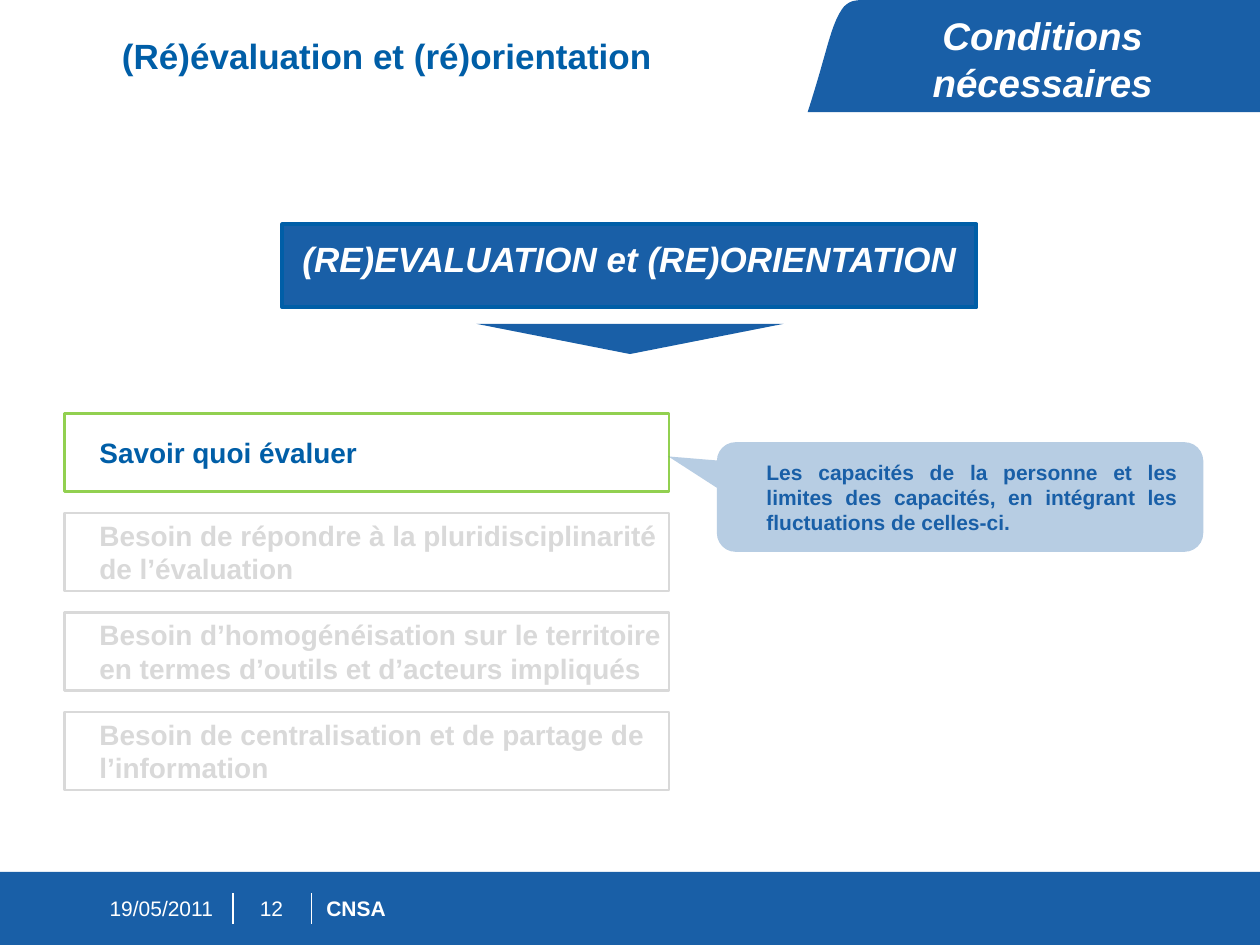
from lxml import etree
from pptx import Presentation
from pptx.dml.color import RGBColor
from pptx.enum.shapes import MSO_CONNECTOR as Connector, MSO_SHAPE as Shape
from pptx.enum.text import MSO_ANCHOR as Anchor, PP_ALIGN as Align
from pptx.oxml.ns import qn
from pptx.util import Inches, Pt

BLUE, NAVY, WHITE, GREY, GREEN = "195FA7", "005EA7", "FFFFFF", "D9D9D9", "92D050"


def colour(value):
    return RGBColor.from_string(value)


def curve(start, first, second, end, steps=16):
    points = []
    for step in range(1, steps + 1):
        t = step / steps
        weights = ((1 - t) ** 3, 3 * t * (1 - t) ** 2, 3 * t * t * (1 - t), t ** 3)
        points.append(tuple(
            sum(w * v for w, v in zip(weights, axis))
            for axis in zip(start, first, second, end)
        ))
    return points


class SlideBuilder:
    """Hold the style and the current slide, and add each kind of element."""

    font = "Arial"

    def __init__(self, deck):
        self.page = deck.slides.add_slide(deck.slide_layouts[6])

    def paint(self, box, fill, line=None, width=1.5, alpha=None):
        box.shadow.inherit = False
        box.fill.solid()
        box.fill.fore_color.rgb = colour(fill)
        if alpha:
            tint = box._element.spPr.find(qn("a:solidFill"))[0]
            etree.SubElement(tint, qn("a:alpha"), val=str(alpha * 1000))
        if line:
            box.line.color.rgb = colour(line)
            box.line.width = Pt(width)
        else:
            box.line.fill.background()
        return box

    def shape(self, kind, at, fill, **style):
        box = self.page.shapes.add_shape(kind, *map(Inches, at))
        return self.paint(box, fill, **style)

    def outline(self, points, fill):
        start, *rest = [(Inches(x), Inches(y)) for x, y in points]
        builder = self.page.shapes.build_freeform(*start)
        builder.add_line_segments(rest)
        return self.paint(builder.convert_to_shape(), fill)

    def set_text(self, box, text, size, ink, bold=True, italic=False, align=Align.LEFT,
                 anchor=Anchor.MIDDLE, margins=(0, 0, 0, 0), spacing=None):
        frame = box.text_frame
        frame.word_wrap = True
        frame.vertical_anchor = anchor
        (frame.margin_left, frame.margin_top,
         frame.margin_right, frame.margin_bottom) = map(Inches, margins)
        para = frame.paragraphs[0]
        para.text = text
        para.alignment = align
        para.line_spacing = spacing
        font = para.font
        font.name, font.size = self.font, Pt(size)
        font.bold, font.italic = bold, italic
        font.color.rgb = colour(ink)

    def label(self, at, text, size, ink, **style):
        box = self.page.shapes.add_textbox(*map(Inches, at))
        self.set_text(box, text, size, ink, **style)

    def divider(self, x, top, bottom):
        line = self.page.shapes.add_connector(
            Connector.STRAIGHT, *map(Inches, (x, top, x, bottom)))
        line.line.color.rgb = colour(WHITE)
        line.line.width = Pt(0.75)
        etree.SubElement(line._element.spPr, qn("a:effectLst"))


def main():
    deck = Presentation()
    deck.slide_width, deck.slide_height = Inches(10), Inches(7.5)
    slide = SlideBuilder(deck)

    tab = [(10, 0), (6.86, 0)]
    tab += curve((6.86, 0), (6.74, 0), (6.73, 0.03), (6.7, 0.05))
    tab += curve((6.7, 0.05), (6.59, 0.19), (6.57, 0.4), (6.41, 0.89))
    slide.outline(tab + [(10, 0.89)], BLUE)

    slide.shape(Shape.RECTANGLE, (0, 6.92, 10, 0.58), BLUE)
    for x in (1.85, 2.47):
        slide.divider(x, 7.09, 7.33)
    for left, width, text, bold, align in (
        (0.87, 0.87, "19/05/2011", False, Align.LEFT),
        (1.96, 0.39, "12", False, Align.CENTER),
        (2.59, 4.38, "CNSA", True, Align.LEFT),
    ):
        slide.label((left, 7.07, width, 0.27), text, 12, WHITE, bold=bold, align=align)

    heading = dict(anchor=Anchor.TOP, margins=(0.1, 0.05, 0.1, 0.05))
    slide.label((6.82, 0.05, 2.91, 0.39), "Conditions nécessaires", 22, WHITE,
                italic=True, align=Align.CENTER, **heading)
    slide.label((0.87, 0.25, 5.43, 0.39), "(Ré)évaluation et (ré)orientation", 20, NAVY,
                spacing=0.95, **heading)

    banner = slide.shape(Shape.RECTANGLE, (2.24, 1.78, 5.51, 0.66), BLUE,
                         line=NAVY, width=2.25)
    slide.set_text(banner, "(RE)EVALUATION et (RE)ORIENTATION", 20, WHITE, italic=True,
                   align=Align.CENTER, margins=(0.16,) * 4, spacing=Pt(16))
    arrow = slide.shape(Shape.ISOSCELES_TRIANGLE, (3.78, 2.57, 2.44, 0.24), BLUE)
    arrow.rotation = 180

    needs = (
        ("Savoir quoi évaluer", GREEN, NAVY),
        ("Besoin de répondre à la pluridisciplinarité de l’évaluation", GREY, GREY),
        ("Besoin d’homogénéisation sur le territoire en termes d’outils et d’acteurs "
         "impliqués", GREY, GREY),
        ("Besoin de centralisation et de partage de l’information", GREY, GREY),
    )
    for row, (text, line, ink) in enumerate(needs):
        need = slide.shape(Shape.RECTANGLE, (0.51, 3.28 + 0.79 * row, 4.8, 0.62),
                           WHITE, line=line)
        slide.set_text(need, text, 16, ink, margins=(0.28, 0, 0.04, 0))

    callout = slide.shape(Shape.ROUNDED_RECTANGULAR_CALLOUT, (5.69, 3.51, 3.86, 0.87),
                          BLUE, alpha=31)
    for index, value in enumerate((-0.6, -0.37, 0.17)):
        callout.adjustments[index] = value
    slide.set_text(callout, "Les capacités de la personne et les limites des capacités, "
                   "en intégrant les fluctuations de celles-ci.", 12, BLUE,
                   align=Align.JUSTIFY, margins=(0.35, 0.16, 0.16, 0.16))

    deck.save("out.pptx")


if __name__ == "__main__":
    main()
